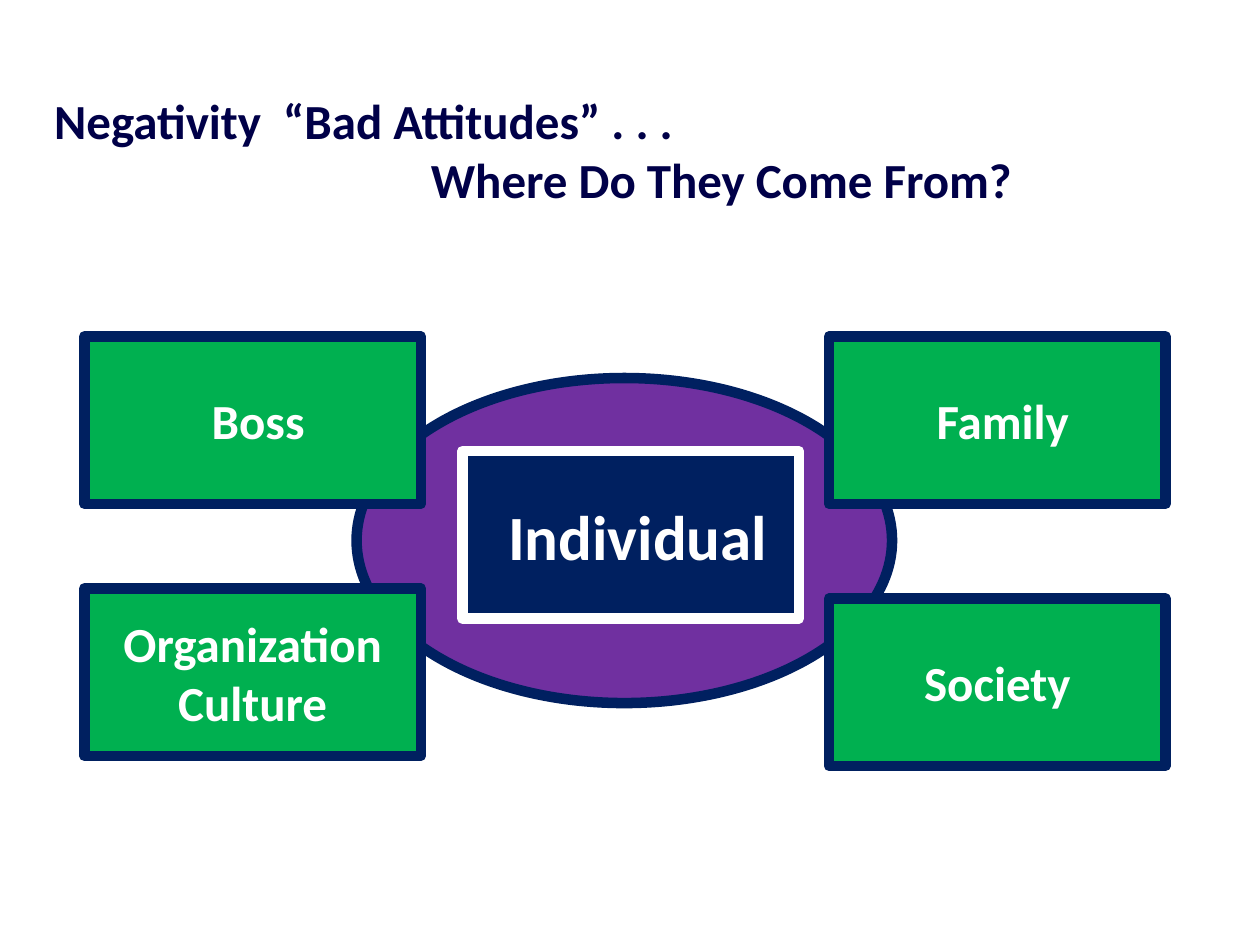
"""Build the slide on where bad attitudes come from."""
from lxml.etree import SubElement
from pptx import Presentation
from pptx.dml.color import RGBColor
from pptx.enum.shapes import MSO_SHAPE as Shape
from pptx.enum.text import MSO_ANCHOR as Anchor, PP_ALIGN as Align
from pptx.oxml.ns import qn
from pptx.util import Inches, Pt

INK = RGBColor(0x00, 0x00, 0x48)
NAVY = RGBColor(0x00, 0x20, 0x60)
GREEN = RGBColor(0x00, 0xB0, 0x50)
PURPLE = RGBColor(0x70, 0x30, 0xA0)
WHITE = RGBColor(0xFF, 0xFF, 0xFF)


def style(para, size, color):
    for key, value in {"name": "Calibri", "size": Pt(size), "bold": True}.items():
        setattr(para.font, key, value)
    para.font.color.rgb = color


def block(kind, left, top, width, height, fill, edge):
    shape = slide.shapes.add_shape(
        kind, Inches(left), Inches(top), Inches(width), Inches(height))
    shape.shadow.inherit = False
    shape.fill.solid()
    shape.fill.fore_color.rgb = fill
    shape.line.color.rgb = edge
    shape.line.width = Pt(6)
    SubElement(shape.line._get_or_add_ln(), qn("a:round"))
    return shape


deck = Presentation()
deck.slide_width, deck.slide_height = Inches(10), Inches(7.5)
slide = deck.slides.add_slide(deck.slide_layouts[5])

title = slide.shapes.title
place = {"left": 0.33, "top": 0.67, "width": 9.25, "height": 2.86}
for key, value in place.items():
    setattr(title, key, Inches(value))
frame = title.text_frame
frame.text = "Negativity  “Bad Attitudes” . . .\nWhere Do They Come From?"
frame.vertical_anchor = Anchor.TOP
frame.word_wrap = True
for para, indent in zip(frame.paragraphs, (0, 2.99)):
    para.alignment = Align.LEFT
    para._p.get_or_add_pPr().set("marL", str(Inches(indent)))
    style(para, 28, INK)

block(Shape.OVAL, 2.83, 3, 4.25, 2.58, PURPLE, NAVY)

boxes = [
    (" Family", 6.58, 2.67, GREEN, NAVY, 28),
    (" Boss", 0.67, 2.67, GREEN, NAVY, 28),
    ("Organization Culture", 0.67, 4.67, GREEN, NAVY, 28),
    (" Individual", 3.67, 3.58, NAVY, WHITE, 36),
    ("Society", 6.58, 4.75, GREEN, NAVY, 28),
]
for text, left, top, fill, edge, size in boxes:
    box = block(Shape.RECTANGLE, left, top, 2.67, 1.33, fill, edge)
    frame = box.text_frame
    frame.text = text
    frame.word_wrap = True
    frame.vertical_anchor = Anchor.MIDDLE
    para = frame.paragraphs[0]
    para.alignment = Align.CENTER
    style(para, size, WHITE)

deck.save("out.pptx")
